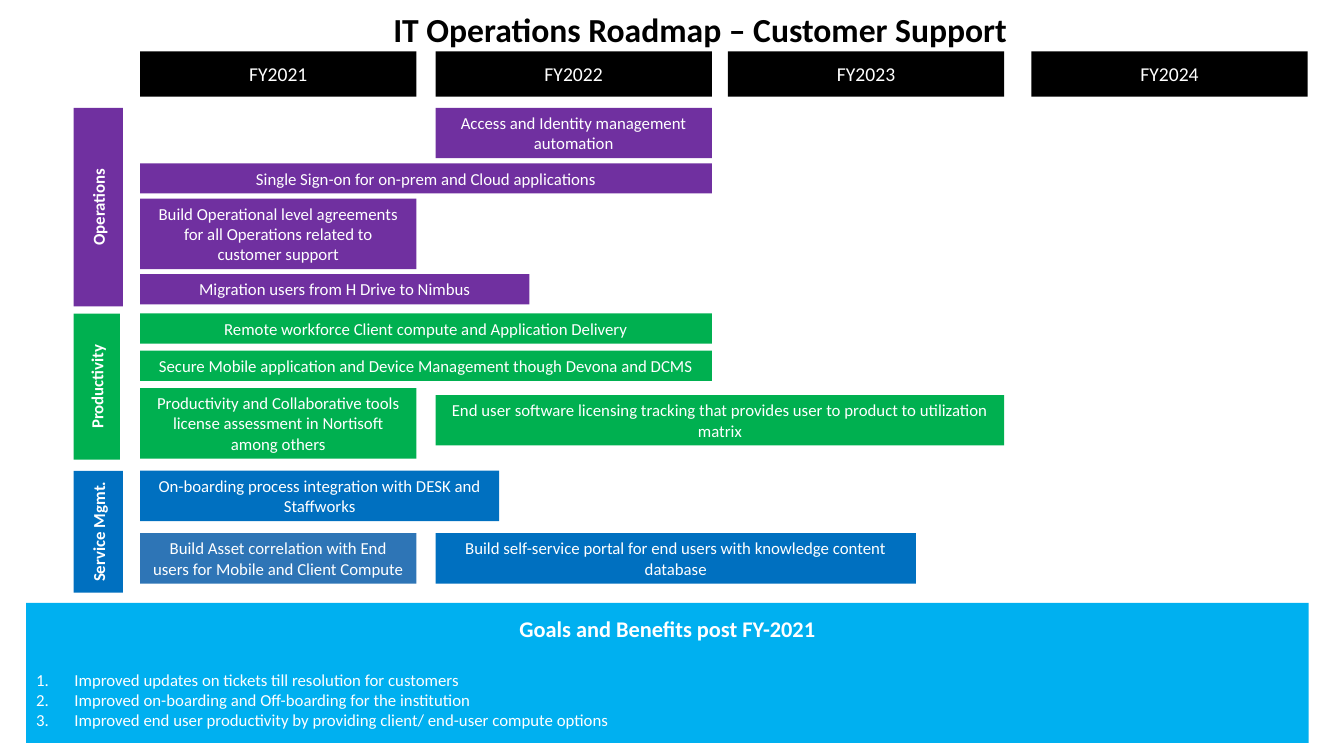
"""Build the customer support roadmap slide."""
from lxml.etree import SubElement
from pptx import Presentation
from pptx.dml.color import RGBColor
from pptx.enum.shapes import MSO_SHAPE
from pptx.enum.text import MSO_ANCHOR as ANCHOR, PP_ALIGN as ALIGN
from pptx.oxml.ns import qn
from pptx.util import Inches, Pt

TITLE = "IT Operations Roadmap – Customer Support"
YEARS = {"FY2021": 1.39, "FY2022": 4.32, "FY2023": 7.22, "FY2024": 10.23}
YEAR_WIDTH, YEAR_TOP, YEAR_HEIGHT = 2.74, 0.51, 0.45
LANE_LEFT, LINE_HEIGHT, BAR_PADDING = 0.73, 0.2, 0.1
BLACK, WHITE, PURPLE, GREEN = "000000", "FFFFFF", "7030A0", "00B050"
BLUE, STEEL, SKY = "0070C0", "2E75B6", "00B0F0"

# Lane: name, colour, top, label width, label height, row gap, rows of bars
# Bar: text, first year, last year, share of last year, lines, own colour
LANES = [
    ("Operations", PURPLE, 1.07, 0.49, 1.97, 0.05, [
        [("Access and Identity management automation", "FY2022", "FY2022", 1, 2, None)],
        [("Single Sign-on for on-prem and Cloud applications", "FY2021", "FY2022", 1, 1, None)],
        [("Build Operational level agreements for all Operations related to customer support",
          "FY2021", "FY2021", 1, 3, None)],
        [("Migration users from H Drive to Nimbus", "FY2021", "FY2022", 0.34, 1, None)],
    ]),
    ("Productivity", GREEN, 3.11, 0.46, 1.45, 0.07, [
        [("Remote workforce Client compute and Application Delivery",
          "FY2021", "FY2022", 1, 1, None)],
        [("Secure Mobile application and Device Management though Devona and DCMS",
          "FY2021", "FY2022", 1, 1, None)],
        [("Productivity and Collaborative tools license assessment in Nortisoft among others",
          "FY2021", "FY2021", 1, 3, None),
         ("End user software licensing tracking that provides user to product to utilization matrix",
          "FY2022", "FY2023", 1, 2, None)],
    ]),
    ("Service Mgmt.", BLUE, 4.67, 0.49, 1.21, 0.12, [
        [("On-boarding process integration with DESK and Staffworks",
          "FY2021", "FY2022", 0.23, 2, None)],
        [("Build Asset correlation with End users for Mobile and Client Compute",
          "FY2021", "FY2021", 1, 2, STEEL),
         ("Build self-service portal for end users with knowledge content database",
          "FY2022", "FY2023", 0.68, 2, None)],
    ]),
]
GOALS_TITLE = "Goals and Benefits post FY-2021"
GOALS = [
    "Improved updates on tickets till resolution for customers",
    "Improved on-boarding and Off-boarding for the institution",
    "Improved end user productivity by providing client/ end-user compute options",
]


def color(value):
    return RGBColor.from_string(value)


def write(paragraph, text, size, ink=WHITE, bold=False, align=ALIGN.CENTER):
    paragraph.text = text
    paragraph.alignment = align
    for run in paragraph.runs:
        run.font.name, run.font.size, run.font.bold = "Calibri", Pt(size), bold
        run.font.color.rgb = color(ink)


def add_box(slide, place, fill, text, size, bold=False, anchor=ANCHOR.MIDDLE):
    box = slide.shapes.add_shape(MSO_SHAPE.RECTANGLE, *map(Inches, place))
    box.shadow.inherit = False
    box.fill.solid()
    box.fill.fore_color.rgb = color(fill)
    box.line.fill.background()
    box.text_frame.word_wrap = True
    box.text_frame.vertical_anchor = anchor
    write(box.text_frame.paragraphs[0], text, size, bold=bold)
    return box


def add_lane(slide, name, fill, top, width, height, gap, rows):
    center_x, center_y = LANE_LEFT + width / 2, top + height / 2
    label = add_box(slide, (center_x - height / 2, center_y - width / 2, height, width),
                    fill, name, 12, bold=True)
    label.rotation = 270
    for row in rows:
        row_lines = max(bar[4] for bar in row)
        for text, first, last, share, lines, own_fill in row:
            left = YEARS[first]
            right = YEARS[last] + share * YEAR_WIDTH
            drop = gap if lines < row_lines else 0
            add_box(slide, (left, top + drop, right - left, BAR_PADDING + lines * LINE_HEIGHT),
                    own_fill or fill, text, 12, anchor=ANCHOR.TOP)
        top += BAR_PADDING + row_lines * LINE_HEIGHT + gap


def add_goals(slide):
    panel = add_box(slide, (0.26, 5.98, 12.72, 1.39), SKY, GOALS_TITLE, 16, bold=True)
    panel.text_frame.paragraphs[0].space_after = Pt(19.5)
    for goal in GOALS:
        item = panel.text_frame.add_paragraph()
        write(item, goal, 12, align=ALIGN.LEFT)
        props = item._p.get_or_add_pPr()
        props.set("marL", str(Inches(0.38)))
        props.set("indent", str(-Inches(0.38)))
        SubElement(props, qn("a:buAutoNum"), type="arabicPeriod")


def main():
    deck = Presentation()
    deck.slide_width, deck.slide_height = Inches(13.33), Inches(7.5)
    slide = deck.slides.add_slide(deck.slide_layouts[6])
    for year, left in YEARS.items():
        add_box(slide, (left, YEAR_TOP, YEAR_WIDTH, YEAR_HEIGHT), BLACK, year, 14)
    heading = slide.shapes.add_textbox(*map(Inches, (1.03, 0.04, 11.83, 0.5)))
    heading.text_frame.word_wrap = True
    write(heading.text_frame.paragraphs[0], TITLE, 24, BLACK, bold=True)
    for lane in LANES:
        add_lane(slide, *lane)
    add_goals(slide)
    deck.save("out.pptx")


if __name__ == "__main__":
    main()
